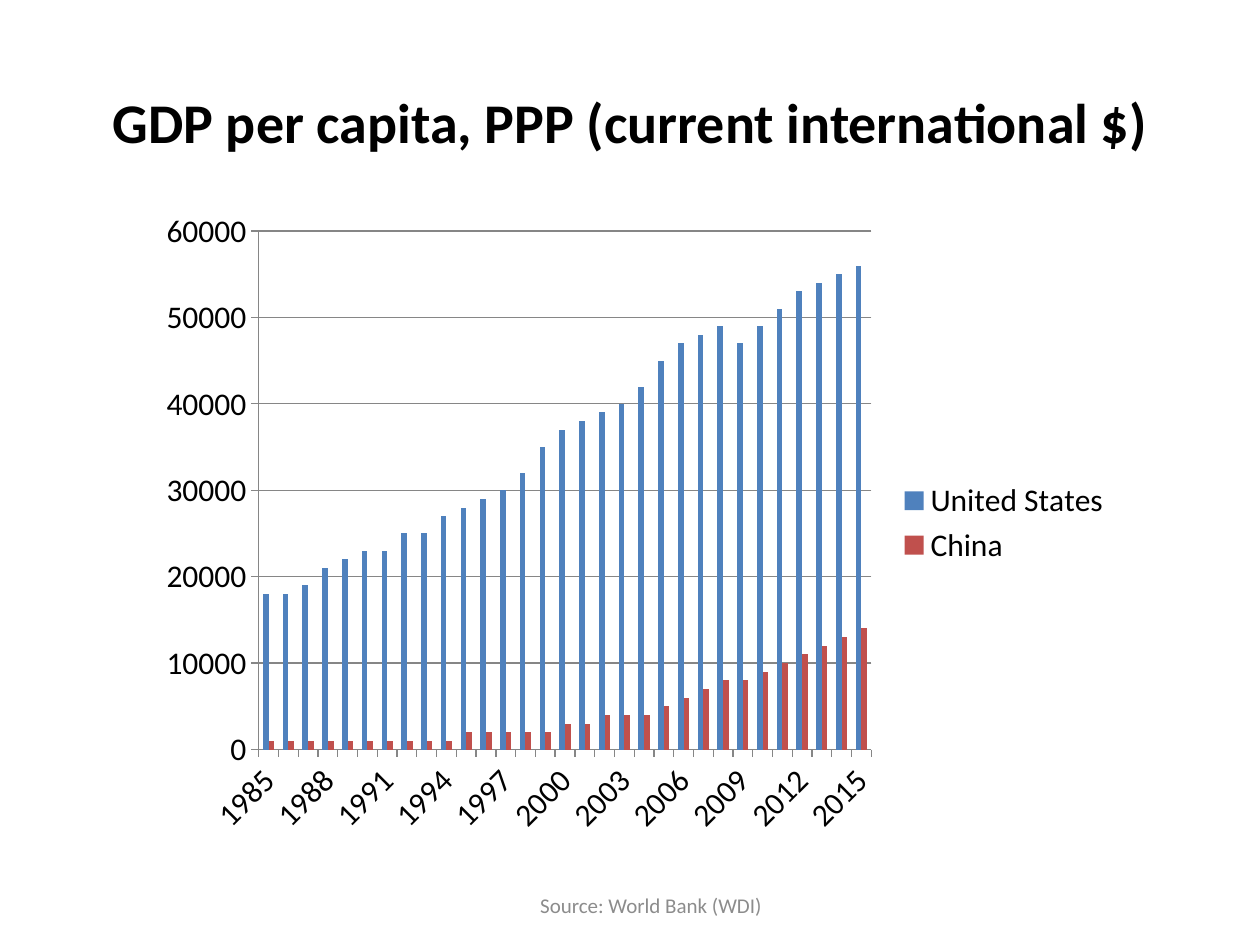
from dataclasses import dataclass

from pptx import Presentation
from pptx.chart.data import CategoryChartData
from pptx.dml.color import RGBColor
from pptx.enum.chart import XL_CHART_TYPE, XL_LEGEND_POSITION, XL_TICK_MARK
from pptx.enum.text import MSO_ANCHOR, PP_ALIGN
from pptx.util import Emu, Pt

PX_PER_INCH = 126
FONT = "Calibri"
COLORS = {
    "text": "000000",
    "source": "8C8C8C",
    "axis": "868686",
    "united_states": "4F81BD",
    "china": "C0504D",
}
YEARS = range(1985, 2016)


@dataclass(frozen=True)
class Box:
    left: int
    top: int
    width: int
    height: int

    def emu(self) -> tuple[Emu, Emu, Emu, Emu]:
        return px(self.left), px(self.top), px(self.width), px(self.height)


@dataclass(frozen=True)
class Country:
    name: str
    color: str
    gdp: tuple[int, ...]


COUNTRIES = (
    Country("United States", "united_states", (
        18000, 18000, 19000, 21000, 22000, 23000, 23000, 25000,
        25000, 27000, 28000, 29000, 30000, 32000, 35000, 37000,
        38000, 39000, 40000, 42000, 45000, 47000, 48000, 49000,
        47000, 49000, 51000, 53000, 54000, 55000, 56000,
    )),
    Country("China", "china", (
        1000, 1000, 1000, 1000, 1000, 1000, 1000, 1000,
        1000, 1000, 2000, 2000, 2000, 2000, 2000, 3000,
        3000, 4000, 4000, 4000, 5000, 6000, 7000, 8000,
        8000, 9000, 10000, 11000, 12000, 13000, 14000,
    )),
)


def px(length: int) -> Emu:
    return Emu(round(length * 914400 / PX_PER_INCH))


def rgb(color: str) -> RGBColor:
    return RGBColor.from_string(COLORS[color])


def style_font(font, size: int, color: str, bold: bool = False) -> None:
    font.name = FONT
    font.size = Pt(size)
    font.bold = bold
    font.color.rgb = rgb(color)


def write_line(frame, text: str, size: int, color: str, bold: bool = False) -> None:
    frame.word_wrap = True
    frame.text = text
    paragraph = frame.paragraphs[0]
    paragraph.alignment = PP_ALIGN.CENTER
    style_font(paragraph.runs[0].font, size, color, bold)


def add_title(slide, box: Box) -> None:
    title = slide.shapes.title
    title.left, title.top, title.width, title.height = box.emu()
    title.text_frame.vertical_anchor = MSO_ANCHOR.MIDDLE
    write_line(title.text_frame, "GDP per capita, PPP (current international $)",
               32, "text", bold=True)


def add_source(slide, box: Box) -> None:
    frame = slide.shapes.add_textbox(*box.emu()).text_frame
    frame.vertical_anchor = MSO_ANCHOR.BOTTOM
    frame.margin_bottom = px(27)
    write_line(frame, "Source: World Bank (WDI)", 12, "source")


def style_axis(axis) -> None:
    axis.major_tick_mark = XL_TICK_MARK.OUTSIDE
    axis.minor_tick_mark = XL_TICK_MARK.NONE
    axis.format.line.color.rgb = rgb("axis")
    axis.format.line.width = Pt(0.75)


def add_gdp_chart(slide, box: Box) -> None:
    data = CategoryChartData(number_format="General")
    data.categories = [str(year) for year in YEARS]
    for country in COUNTRIES:
        data.add_series(country.name, country.gdp)
    chart = slide.shapes.add_chart(
        XL_CHART_TYPE.COLUMN_CLUSTERED, *box.emu(), data).chart
    style_font(chart.font, 18, "text")
    chart.has_title = False
    chart.has_legend = True
    chart.legend.position = XL_LEGEND_POSITION.RIGHT
    chart.legend.include_in_layout = False

    for axis in (chart.category_axis, chart.value_axis):
        style_axis(axis)
    chart.value_axis.minimum_scale = 0
    chart.value_axis.maximum_scale = 60000
    chart.value_axis.major_unit = 10000
    gridlines = chart.value_axis.major_gridlines.format.line
    gridlines.color.rgb = rgb("axis")
    gridlines.width = Pt(0.75)

    plot = chart.plots[0]
    plot.gap_width = 150
    plot.overlap = 0
    plot.vary_by_categories = False
    for series, country in zip(plot.series, COUNTRIES):
        series.format.fill.solid()
        series.format.fill.fore_color.rgb = rgb(country.color)


def main() -> None:
    presentation = Presentation()
    presentation.slide_width = px(1260)
    presentation.slide_height = px(945)
    slide = presentation.slides.add_slide(presentation.slide_layouts[5])
    add_title(slide, Box(95, 63, 1071, 116))
    add_source(slide, Box(231, 798, 840, 147))
    add_gdp_chart(slide, Box(147, 199, 977, 648))
    presentation.save("out.pptx")


if __name__ == "__main__":
    main()
